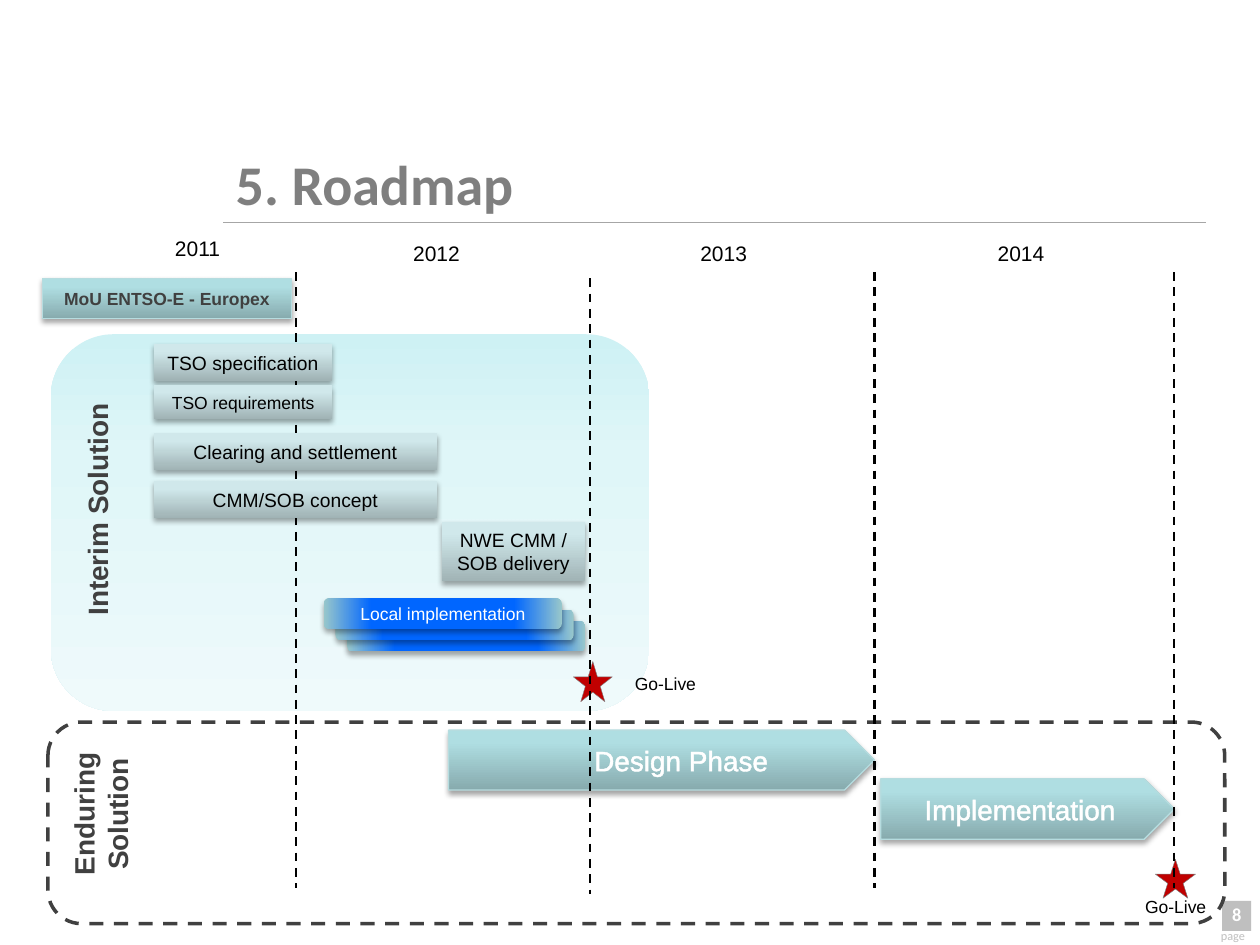
from lxml import etree
from pptx import Presentation
from pptx.dml.color import RGBColor
from pptx.enum.dml import MSO_LINE
from pptx.enum.shapes import MSO_CONNECTOR, MSO_SHAPE
from pptx.enum.text import MSO_ANCHOR, PP_ALIGN
from pptx.oxml.ns import qn
from pptx.util import Pt

RECTANGLE, ROUNDED = MSO_SHAPE.RECTANGLE, MSO_SHAPE.ROUNDED_RECTANGLE
ARROW, STAR = MSO_SHAPE.PENTAGON, MSO_SHAPE.STAR_5_POINT
DASH, STRAIGHT = MSO_LINE.DASH, MSO_CONNECTOR.STRAIGHT
LEFT, CENTER, JUSTIFY, RIGHT = PP_ALIGN.LEFT, PP_ALIGN.CENTER, PP_ALIGN.JUSTIFY, PP_ALIGN.RIGHT
TOP, MIDDLE, BOTTOM = MSO_ANCHOR.TOP, MSO_ANCHOR.MIDDLE, MSO_ANCHOR.BOTTOM

BLACK = RGBColor(0x00, 0x00, 0x00)
WHITE = RGBColor(0xFF, 0xFF, 0xFF)
DARK = RGBColor(0x40, 0x40, 0x40)
GRAY = RGBColor(0x7F, 0x7F, 0x7F)
OUTLINE_GRAY = RGBColor(0x7D, 0x7D, 0x7D)
RULE_GRAY = RGBColor(0xA6, 0xA6, 0xA6)
LIGHT_GRAY = RGBColor(0xBF, 0xBF, 0xBF)
STAR_EDGE = RGBColor(0x80, 0x80, 0x80)
RED = RGBColor(0xC0, 0x00, 0x00)
TEAL_EDGE = RGBColor(0xB6, 0xDC, 0xDF)
BLUE = RGBColor(0x00, 0x66, 0xFF)
BLUE_EDGE = RGBColor(0x98, 0xC7, 0xCB)

PANEL_STOPS = [(0, RGBColor(0xCE, 0xF1, 0xF4)), (32, RGBColor(0xDF, 0xF6, 0xF8)),
               (100, RGBColor(0xEF, 0xFA, 0xFB))]
TEAL_STOPS = [(0, RGBColor(0x87, 0xAB, 0xAE)), (80, RGBColor(0xAF, 0xDE, 0xE2)),
              (100, RGBColor(0xAF, 0xE0, 0xE4))]
TASK_STOPS = [(0, RGBColor(0xA0, 0xB3, 0xB5)), (80, RGBColor(0xD0, 0xE8, 0xEB)),
              (100, RGBColor(0xD1, 0xEA, 0xEC))]
LOCAL_STOPS = [(0, BLUE_EDGE), (20, BLUE), (80, BLUE), (100, BLUE_EDGE)]


def child(parent, tag, **attributes):
    """Append a DrawingML element and return it."""
    return etree.SubElement(parent, qn(tag), {key: str(value) for key, value in attributes.items()})


def place(shape, area):
    """Set left, top, width and height in points."""
    shape.left, shape.top, shape.width, shape.height = (Pt(value) for value in area)


def write(shape, lines, size, color, bold=False, align=LEFT, anchor=TOP, font="Arial", outline=None):
    """Write one paragraph per line, with an optional (colour, width) text outline."""
    frame = shape.text_frame
    frame.word_wrap = True
    frame.vertical_anchor = anchor
    for index, line in enumerate(lines):
        para = frame.add_paragraph() if index else frame.paragraphs[0]
        para.alignment = align
        span = para.add_run()
        span.text = line
        span.font.size, span.font.name, span.font.bold = Pt(size), font, bold
        span.font.color.rgb = color
        if outline:
            edge = etree.Element(qn("a:ln"), {"w": str(Pt(outline[1]))})
            child(child(edge, "a:solidFill"), "a:srgbClr", val=outline[0])
            span.font._element.insert(0, edge)


def add_text(page, area, lines, size, color, rotation=0, **style):
    """Add a text box."""
    box = page.shapes.add_textbox(*(Pt(value) for value in area))
    box.rotation = rotation
    write(box, lines, size, color, **style)
    return box


def set_gradient(shape, stops, angle):
    """Fill a shape with a linear gradient, its angle in clockwise degrees."""
    shape.fill.gradient()
    gradient = shape._element.spPr.find(qn("a:gradFill"))
    for part in list(gradient):
        gradient.remove(part)
    stop_list = child(gradient, "a:gsLst")
    for position, color in stops:
        child(child(stop_list, "a:gs", pos=position * 1000), "a:srgbClr", val=color)
    child(gradient, "a:lin", ang=angle * 60000, scaled=0)


def set_shadow(shape):
    """Give a shape a soft shadow below it."""
    effects = shape._element.spPr.find(qn("a:effectLst"))
    shadow = child(effects, "a:outerShdw", blurRad=Pt(3.1), dist=Pt(1.8), dir=5400000, rotWithShape=0)
    child(child(shadow, "a:srgbClr", val=BLACK), "a:alpha", val=35000)


def add_box(page, kind, area, fill=None, line=None, width=0.75):
    """Add a preset shape with a plain fill and line."""
    box = page.shapes.add_shape(kind, *(Pt(value) for value in area))
    box.shadow.inherit = False
    if fill is not None:
        box.fill.solid()
        box.fill.fore_color.rgb = fill
    if line is None:
        box.line.fill.background()
    else:
        box.line.color.rgb = line
        box.line.width = Pt(width)
    return box


def add_bar(page, kind, area, stops, angle=270, line=None):
    """Add a shaded bar with a shadow."""
    bar = add_box(page, kind, area, line=line)
    set_gradient(bar, stops, angle)
    set_shadow(bar)
    return bar


def add_line(page, start, end, color, width, dash=None):
    """Add a straight line between two points."""
    line = page.shapes.add_connector(STRAIGHT, *(Pt(value) for value in start + end))
    line.line.color.rgb = color
    line.line.width = Pt(width)
    if dash:
        line.line.dash_style = dash
    child(line._element.spPr, "a:effectLst")


def add_title(page):
    """Place the title, the rule below it and the page number."""
    title = page.shapes.title
    place(title, (127.5, 37.5, 561.5, 90))
    write(title, ["5. Roadmap"], 32, GRAY, bold=True, anchor=BOTTOM, font="Calibri")
    add_line(page, (127.5, 127.3), (689, 127.3), RULE_GRAY, 0.75)
    add_box(page, RECTANGLE, (698.4, 514.8, 16.6, 17.2), LIGHT_GRAY)
    add_text(page, (684, 512.8, 32.4, 19.4), ["8"], 10.5, WHITE, bold=True, align=RIGHT, font="Calibri")
    label = add_text(page, (697.7, 532.8, 18, 3.6), ["page"], 7, LIGHT_GRAY,
                     align=JUSTIFY, anchor=MIDDLE, font="Calibri")
    frame = label.text_frame
    frame.margin_left = frame.margin_top = frame.margin_right = frame.margin_bottom = 0


def add_go_live(page, star_area, label_area):
    """Add a milestone star and its label."""
    add_box(page, STAR, star_area, RED, STAR_EDGE, 0.25)
    add_text(page, label_area, ["Go-Live"], 10, BLACK)


def add_phase(page, area, name, inset=7.2):
    """Add an arrow for a phase of the enduring solution."""
    phase = add_bar(page, ARROW, area, TEAL_STOPS, line=TEAL_EDGE)
    write(phase, [name], 16, WHITE, align=CENTER, anchor=MIDDLE, outline=(WHITE, 1.45))
    phase.text_frame.margin_left = Pt(inset)


def main():
    """Build the roadmap slide."""
    deck = Presentation()
    deck.slide_width, deck.slide_height = Pt(720), Pt(540)
    page = deck.slides.add_slide(deck.slide_layouts[5])
    add_title(page)

    panel = add_box(page, ROUNDED, (29, 191, 342, 215.3))
    set_gradient(panel, PANEL_STOPS, 90)
    add_go_live(page, (327.6, 378, 22.3, 23), (355.7, 380.9, 58.3, 19.4))
    for year, left, top in ((2011, 92.9, 131), (2012, 229, 133.9), (2013, 393.1, 133.9), (2014, 563, 133.9)):
        add_text(page, (left, top, 51.1, 21.6), [str(year)], 12, BLACK)
    heading = {"rotation": 270, "bold": True, "outline": (OUTLINE_GRAY, 0.83)}
    add_text(page, (-15.8, 274.3, 142.6, 26.6), ["Interim Solution"], 16, DARK, **heading)

    frame = add_box(page, ROUNDED, (27.4, 412.6, 672.5, 115.2), WHITE, DARK, 2)
    frame.line.dash_style = DASH
    add_phase(page, (503.3, 445, 167.8, 34.6), "Implementation")
    add_go_live(page, (660.2, 491, 23, 22.3), (647.3, 508.3, 52.6, 19.4))
    add_text(page, (5, 442.1, 105.1, 46.1), ["Enduring", "Solution"], 16, DARK, align=CENTER, **heading)
    add_phase(page, (256.3, 417.2, 243.4, 34.2), "Design Phase", inset=38)

    for x, top in ((169.2, 155.5), (337, 159.1), (499.7, 155.5), (671, 155.5)):
        add_line(page, (x, top), (x, top + 352), BLACK, 1.25, DASH)

    for name, area, size in (
        ("TSO specification", (87.8, 196.6, 102.2, 20.9), 11),
        ("TSO requirements", (87.8, 220.3, 102.2, 19.4), 10),
        ("Clearing and settlement", (87.8, 247.7, 162, 20.9), 11),
        ("CMM/SOB concept", (87.8, 275, 162, 20.9), 11),
        ("NWE CMM / SOB delivery", (252.7, 298.1, 81.4, 34.2), 11),
    ):
        task = add_bar(page, RECTANGLE, area, TASK_STOPS)
        write(task, [name], size, BLACK, align=CENTER, anchor=MIDDLE)

    for step in (2, 1, 0):
        local = add_bar(page, ROUNDED, (185 + 6.7 * step, 342 + 6.5 * step, 136.1, 17.3), LOCAL_STOPS, 0)
    write(local, ["Local implementation"], 10, WHITE, align=CENTER, anchor=MIDDLE)
    memorandum = add_bar(page, RECTANGLE, (24.3, 159.1, 142.2, 23), TEAL_STOPS, line=TEAL_EDGE)
    write(memorandum, ["MoU ENTSO-E - Europex"], 10, DARK, bold=True, align=CENTER, anchor=MIDDLE)
    deck.save("out.pptx")


if __name__ == "__main__":
    main()
